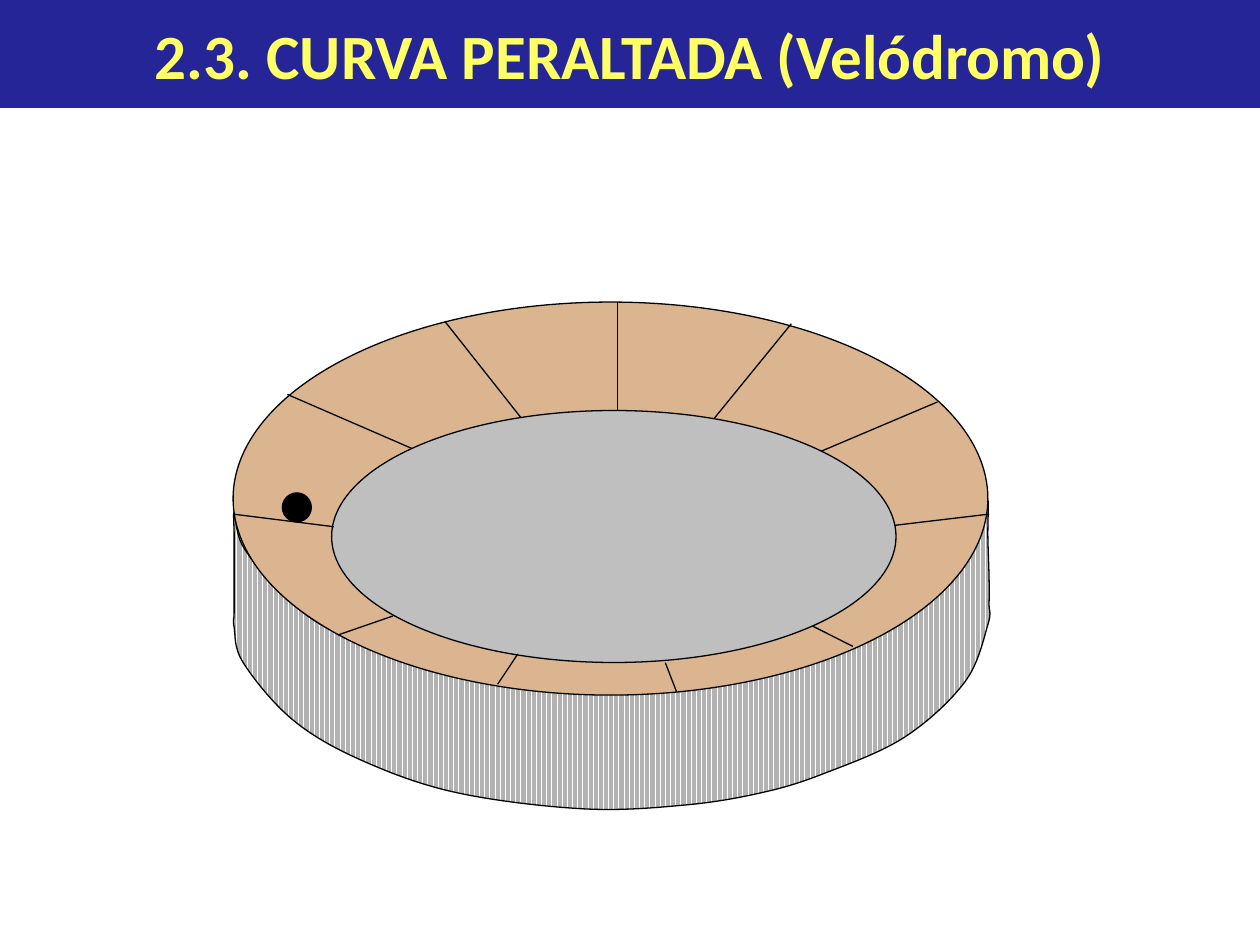
from lxml.etree import SubElement
from pptx import Presentation
from pptx.dml.color import RGBColor
from pptx.enum.dml import MSO_PATTERN
from pptx.enum.shapes import MSO_CONNECTOR, MSO_SHAPE
from pptx.enum.text import MSO_ANCHOR, PP_ALIGN
from pptx.oxml.ns import qn
from pptx.util import Pt

# Outline of the outer wall, points relative to the velodrome box
WALL = [
    (1.8, 121), (1.8, 133.3), (1.8, 149.8), (1.8, 162.8), (1.8, 178),
    (1.8, 186.5), (7, 206.7), (35, 239.1), (74, 262.2), (128.6, 280.9),
    (201.4, 290.2), (259.7, 288), (303.6, 280.9), (338.9, 270), (385, 249.2),
    (419.5, 217.5), (432.5, 185), (433.2, 172.9), (433.2, 157.8),
    (432.5, 134.7), (432.5, 113.8), (428.9, 132.6), (416.6, 154.9),
    (398.6, 171.4), (356.9, 196.6), (305, 213.9), (254.6, 221.8),
    (197.8, 223.3), (153.1, 219), (107.8, 208.2), (76, 196.6), (45, 180.8),
    (22, 159.2), (6.2, 139),
]

# Track joints: inner x, inner y, outer x, outer y
JOINTS = [
    (220.8, 62, 220.8, 0.8), (332.4, 185.8, 355.4, 197.4),
    (248.2, 206.7, 254.6, 223.3), (163.9, 201.7, 152.4, 219),
    (92.6, 180, 61, 190.9), (103.4, 84.3, 32.2, 53.4),
    (165.4, 66.3, 122.2, 11.6), (276.2, 67, 320.2, 13),
    (337.4, 85.8, 403.7, 57.7), (1.2, 121.8, 58.8, 129),
    (433.2, 121.8, 379.2, 128.2),
]


def color(value):
    return RGBColor.from_string(value)


def outline(shape):
    shape.line.color.rgb = color("000000")
    shape.line.width = Pt(0.75)


def write_text(shape, text, size, font, fill, bold=False, align=PP_ALIGN.CENTER):
    frame = shape.text_frame
    frame.word_wrap = True
    frame.vertical_anchor = MSO_ANCHOR.MIDDLE
    paragraph = frame.paragraphs[0]
    paragraph.alignment = align
    run = paragraph.add_run()
    run.text = text
    run.font.size = Pt(size)
    run.font.name = font
    run.font.bold = bold
    run.font.color.rgb = color(fill)


def add_ellipse(shapes, left, top, width, height, fill):
    ellipse = shapes.add_shape(
        MSO_SHAPE.OVAL, Pt(left), Pt(top), Pt(width), Pt(height))
    ellipse.shadow.inherit = False
    ellipse.fill.solid()
    ellipse.fill.fore_color.rgb = color(fill)
    outline(ellipse)
    return ellipse


def add_line(shapes, x1, y1, x2, y2):
    line = shapes.add_connector(
        MSO_CONNECTOR.STRAIGHT, Pt(x1), Pt(y1), Pt(x2), Pt(y2))
    outline(line)
    SubElement(line._element.spPr, qn("a:effectLst"))


def add_smooth_loop(shapes, points):
    """Draw a closed freeform whose segments curve smoothly through the points."""
    builder = shapes.build_freeform(*points[0])
    builder.add_line_segments(points[1:] + points[:1], close=True)
    loop = builder.convert_to_shape()
    count = len(points)
    segments = list(loop._element.iter(qn("a:lnTo")))
    for index, segment in enumerate(segments):
        before, start, end, after = (
            points[(index + shift) % count] for shift in (-1, 0, 1, 2))
        first = [s + (e - b) / 6 for b, s, e in zip(before, start, end)]
        second = [e - (a - s) / 6 for s, e, a in zip(start, end, after)]
        segment.tag = qn("a:cubicBezTo")
        segment.remove(segment[0])
        for x, y in (first, second, end):
            SubElement(segment, qn("a:pt"), x=str(round(x - loop.left)),
                       y=str(round(y - loop.top)))
    return loop


def add_title(slide, left, top, width, height):
    title = slide.shapes.title
    title.left, title.top = Pt(left), Pt(top)
    title.width, title.height = Pt(width), Pt(height)
    title.fill.solid()
    title.fill.fore_color.rgb = color("252597")
    write_text(title, "2.3. CURVA PERALTADA (Velódromo)", size=36,
               font="Calibri", fill="FFFF66", bold=True)


def add_wall(shapes, left, top):
    wall = add_smooth_loop(
        shapes, [(Pt(left + x), Pt(top + y)) for x, y in WALL])
    wall.shadow.inherit = False
    wall.fill.patterned()
    wall.fill.pattern = MSO_PATTERN.DARK_VERTICAL
    wall.fill.fore_color.rgb = color("B2B2B2")
    wall.fill.back_color.rgb = color("FFFFFF")
    outline(wall)


def add_velodrome(slide, left, top):
    shapes = slide.shapes.add_group_shape().shapes
    add_wall(shapes, left, top)
    # Banked track and infield
    add_ellipse(shapes, left + 1.2, top + 0.6, 431.3, 224.6, "DAB590")
    add_ellipse(shapes, left + 57.5, top + 62.6, 322.5, 144, "BFBFBF")
    for x1, y1, x2, y2 in JOINTS:
        add_line(shapes, left + x1, top + y1, left + x2, top + y2)
    # Rider on the track
    rider = add_ellipse(slide.shapes, left + 29, top + 109.3, 17.3, 17.3, "000000")
    rider.line.fill.background()


def main():
    presentation = Presentation()
    presentation.slide_width, presentation.slide_height = Pt(720), Pt(540)
    slide = presentation.slides.add_slide(presentation.slide_layouts[0])
    subtitle = slide.placeholders[1]._element
    subtitle.getparent().remove(subtitle)
    add_title(slide, 0, 0, 720, 61.7)
    add_velodrome(slide, 132, 172)
    presentation.save("out.pptx")


if __name__ == "__main__":
    main()
